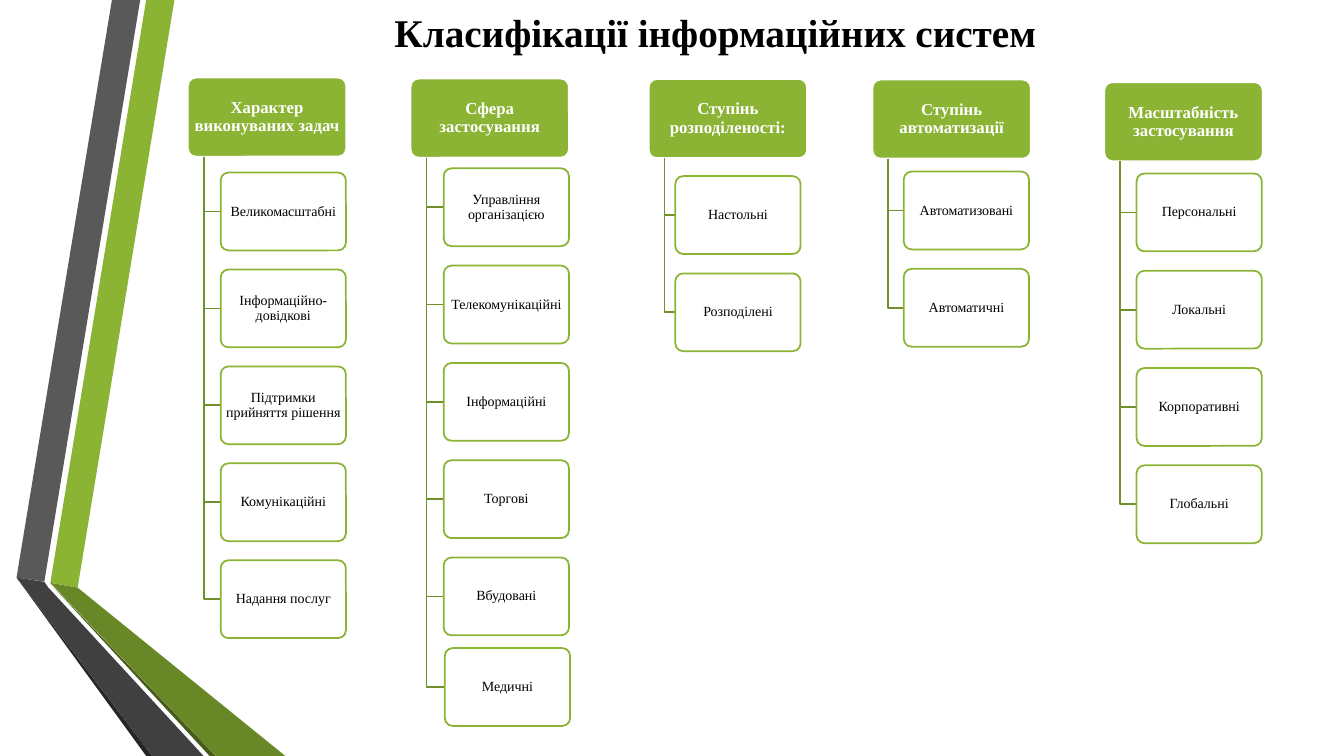
from dataclasses import dataclass

from pptx import Presentation
from pptx.dml.color import RGBColor
from pptx.enum.shapes import MSO_SHAPE as Shape
from pptx.enum.text import MSO_ANCHOR as Anchor, PP_ALIGN as Align
from pptx.oxml.ns import qn
from pptx.util import Inches, Pt
from lxml.etree import SubElement

WIDTH, HEIGHT = Inches(13.333), Inches(7.5)


@dataclass(frozen=True)
class Theme:
    """Colours, font and type sizes of the slide."""
    font: str = "Times New Roman"
    title_size: int = 28
    head_size: int = 12
    leaf_size: int = 10
    line_width: float = 1.25
    black: str = "000000"
    white: str = "FFFFFF"
    green: str = "8BB434"
    branch: str = "6F902A"
    olive: str = "688727"
    dark_olive: str = "465A1A"
    grey: str = "595959"
    dark_grey: str = "404040"
    charcoal: str = "262626"


@dataclass(frozen=True)
class Branch:
    """One classification: percent positions, heading and leaf labels."""
    left: float
    top: float
    leaf_left: float
    leaf_top: float
    heading: str
    leaves: tuple
    pitch: float = 12.87
    last_shift: tuple = (0, 0)


THEME = Theme()
HEAD_W, HEAD_H = 11.78, 10.45
LEAF_W, LEAF_H = 9.32, 10.3
TRUNK_INSET = HEAD_W / 10

RIBBONS = (
    (THEME.green, ((3.75, 77.07), (5.78, 77.73), (12.98, 0), (10.88, 0))),
    (THEME.grey, ((10.43, 0), (8.33, 0), (1.23, 76.4), (3.3, 76.93))),
    (THEME.charcoal, ((1.23, 76.4), (10.88, 100), (11.33, 100))),
    (THEME.dark_olive, ((3.75, 77.2), (15.6, 100), (16.05, 100))),
    (THEME.olive, ((3.75, 77.1), (16.05, 100), (21.23, 100), (5.78, 77.73))),
    (THEME.dark_grey, ((15.15, 100), (3.6, 77.73), (3.3, 76.97),
                       (1.23, 76.4), (11.33, 100))),
)

BRANCHES = (
    Branch(48.27, 10.45, 50.25, 23.3, "Ступінь розподіленості:",
           ("Настольні", "Розподілені")),
    Branch(64.92, 10.53, 67.25, 22.7, "Ступінь автоматизації",
           ("Автоматизовані", "Автоматичні")),
    Branch(13.98, 10.27, 16.42, 22.83, "Характер виконуваних задач",
           ("Великомасштабні", "Інформаційно-довідкові",
            "Підтримки прийняття рішення", "Комунікаційні",
            "Надання послуг"), pitch=12.82),
    Branch(82.17, 10.87, 84.57, 22.95, "Масштабність застосування",
           ("Персональні", "Локальні", "Корпоративні", "Глобальні")),
    Branch(30.55, 10.4, 33.02, 22.27, "Сфера застосування",
           ("Управління організацією", "Телекомунікаційні", "Інформаційні",
            "Торгові", "Вбудовані", "Медичні"), last_shift=(0.08, -0.89)),
)


def x(share):
    """Turn a percent of the slide's width into a length."""
    return int(WIDTH * share / 100)


def y(share):
    """Turn a percent of the slide's height into a length."""
    return int(HEIGHT * share / 100)


def colour(code):
    """Return the colour for a hex code."""
    return RGBColor.from_string(code)


def write(s, text, size, ink, bold=False, spacing=1.0, inset=0.02):
    """Put centred text into a shape."""
    tf = s.text_frame
    tf.word_wrap = True
    tf.vertical_anchor = Anchor.MIDDLE
    tf.margin_left = tf.margin_right = Inches(inset)
    tf.margin_top = tf.margin_bottom = Inches(0.02)
    tf.text = text
    p = tf.paragraphs[0]
    p.alignment = Align.CENTER
    p.line_spacing = spacing
    font = p.runs[0].font
    font.name, font.size, font.bold = THEME.font, Pt(size), bold
    font.color.rgb = colour(ink)


def add_outline(slide, points, closed):
    """Draw a freeform through percent points."""
    places = [(x(px), y(py)) for px, py in points]
    builder = slide.shapes.build_freeform(*places[0])
    builder.add_line_segments(places[1:], close=closed)
    s = builder.convert_to_shape()
    s.shadow.inherit = False
    return s


def add_ribbon(slide, fill, points):
    """Draw one filled piece of the side ribbon."""
    s = add_outline(slide, points, closed=True)
    s.fill.solid()
    s.fill.fore_color.rgb = colour(fill)
    s.line.fill.background()


def add_elbow(slide, points):
    """Draw the open line from a heading down to a leaf."""
    s = add_outline(slide, points, closed=False)
    s.fill.background()
    s.line.color.rgb = colour(THEME.branch)
    s.line.width = Pt(THEME.line_width)


def add_box(slide, left, top, width, height, fill, line):
    """Draw a rounded box at percent positions."""
    s = slide.shapes.add_shape(Shape.ROUNDED_RECTANGLE, x(left), y(top),
                               x(width), y(height))
    s.adjustments[0] = 0.1
    s.shadow.inherit = False
    s.fill.solid()
    s.fill.fore_color.rgb = colour(fill)
    s.line.color.rgb = colour(line)
    s.line.width = Pt(THEME.line_width)
    return s


def add_leaf(slide, left, top, label):
    """Draw a slightly transparent white box with its label."""
    s = add_box(slide, left, top, LEAF_W, LEAF_H, THEME.white, THEME.green)
    rgb = s.fill._xPr.find(qn("a:solidFill"))[0]
    SubElement(rgb, qn("a:alpha")).set("val", "90000")
    write(s, label, THEME.leaf_size, THEME.black, spacing=0.9)


def add_branch(slide, branch):
    """Draw a heading with its leaves and joining lines."""
    s = add_box(slide, branch.left, branch.top, HEAD_W, HEAD_H,
                THEME.green, THEME.white)
    write(s, branch.heading, THEME.head_size, THEME.white, True, 0.9, 0.03)
    trunk = branch.left + TRUNK_INSET
    last = len(branch.leaves) - 1
    for i, label in enumerate(branch.leaves):
        dx, dy = branch.last_shift if i == last else (0, 0)
        left = branch.leaf_left + dx
        top = branch.leaf_top + i * branch.pitch + dy
        middle = top + LEAF_H / 2
        add_elbow(slide, ((trunk, branch.top + HEAD_H),
                          (trunk, middle), (left, middle)))
        add_leaf(slide, left, top, label)


def add_title(slide, text):
    """Write the slide's title across the top."""
    s = slide.shapes.add_textbox(x(12.08), 0, x(82.28), y(8.53))
    write(s, text, THEME.title_size, THEME.black, bold=True, inset=0.1)


def main():
    """Build and save the slide."""
    prs = Presentation()
    prs.slide_width, prs.slide_height = WIDTH, HEIGHT
    slide = prs.slides.add_slide(prs.slide_layouts[6])
    for fill, points in RIBBONS:
        add_ribbon(slide, fill, points)
    add_title(slide, "Класифікації інформаційних систем")
    for branch in BRANCHES:
        add_branch(slide, branch)
    prs.save("out.pptx")


if __name__ == "__main__":
    main()
